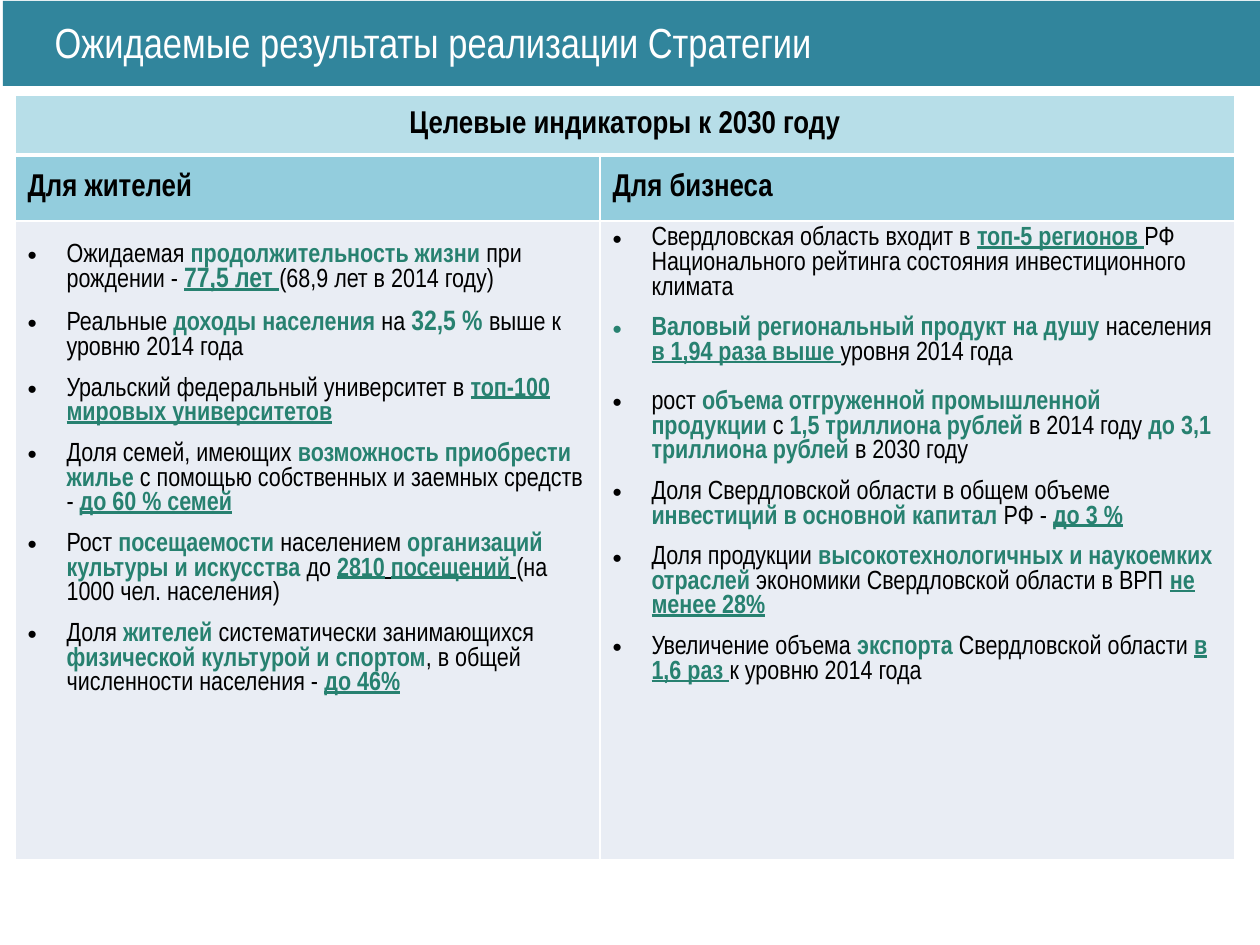
from pptx import Presentation
from pptx.dml.color import RGBColor
from pptx.enum.shapes import MSO_SHAPE as Shape
from pptx.enum.text import MSO_ANCHOR as Anchor, PP_ALIGN as Align
from pptx.oxml import parse_xml
from pptx.oxml.ns import nsdecls
from pptx.util import Pt

# Run styles: a plain string is ordinary text
GREEN = "278170"
KEY = dict(bold=True, color=GREEN)
TARGET = dict(KEY, underline=True)
LINED = dict(underline=True)
BIG = 16

TITLE = "Ожидаемые результаты реализации Стратегии"
SUBTITLE = "Целевые индикаторы к 2030 году"
HEADINGS = ["Для жителей", "Для бизнеса"]
RESIDENTS = [
    ["Ожидаемая ", ("продолжительность жизни ", KEY), "при рождении - ",
     ("77,5 лет ", dict(TARGET, size=BIG)), "(68,9 лет в 2014 году)"],
    ["Реальные ", ("доходы населения ", KEY), "на ",
     ("32,5 % ", dict(KEY, size=BIG)), "выше к уровню 2014 года"],
    ["Уральский федеральный университет в ",
     ("топ-100 мировых университетов", TARGET)],
    ["Доля семей, имеющих ", ("возможность приобрести жилье ", KEY),
     "с помощью собственных и заемных средств - ", ("до 60 % семей", TARGET)],
    ["Рост ", ("посещаемости", KEY), " населением ",
     ("организаций культуры и искусства ", KEY), "до ", ("2810", TARGET),
     (" ", LINED), ("посещений", TARGET), (" ", LINED),
     "(на 1000 чел. населения)"],
    ["Доля ", ("жителей", KEY), " систематически занимающихся ",
     ("физической культурой и спортом", KEY),
     ", в общей численности населения - ", ("до 46%", TARGET)],
]
BUSINESS = [
    ["Свердловская область входит в ", ("топ-5 регионов ", TARGET),
     "РФ Национального рейтинга состояния инвестиционного климата"],
    [("Валовый региональный продукт на душу ", KEY), "населения ",
     ("в 1,94 раза выше ", TARGET), "уровня 2014 года"],
    ["рост ", ("объема отгруженной промышленной продукции ", KEY), "с ",
     ("1,5 триллиона рублей ", KEY), "в 2014 году ",
     ("до 3,1 триллиона рублей", KEY), " в 2030 году"],
    ["Доля Свердловской области в общем объеме ",
     ("инвестиций в основной капитал ", KEY), "РФ - ", ("до 3 %", TARGET)],
    ["Доля продукции ", ("высокотехнологичных и наукоемких отраслей ", KEY),
     "экономики Свердловской области в ВРП ", ("не менее 28%", TARGET)],
    ["Увеличение объема ", ("экспорта", KEY), " Свердловской области ",
     ("в", TARGET), " ", ("1,6 раз ", TARGET), "к уровню 2014 года"],
]
GAP, WIDE_GAP = 9.3, 14  # points between bullets
# bullets, top margin in px, gap before each bullet
LISTS = [(RESIDENTS, 22, [0] + [GAP] * 5),
         (BUSINESS, 6, [0, GAP, WIDE_GAP] + [GAP] * 3)]

COLUMNS = [585, 635]
ROWS = [60, 66, 639]
ROW_FILLS = ["B7DEE8", "93CDDD", "E9EDF4"]
INDENT = 39


def px(value):
    return value * 914400 // 126


def rgb(color):
    return RGBColor.from_string(color)


def add_text(para, text, size=15, color="000000", bold=False, underline=False):
    span = para.add_run()
    span.text = text
    font = span.font
    font.name, font.size = "Arial Narrow", Pt(size)
    font.bold, font.underline = bold, underline
    font.color.rgb = rgb(color)


def add_bullet(para):
    props = para._p.get_or_add_pPr()
    props.set("marL", str(px(INDENT)))
    props.set("indent", str(-px(INDENT)))
    props.append(parse_xml(f'<a:buFont {nsdecls("a")} typeface="Arial"/>'))
    props.append(parse_xml(f'<a:buChar {nsdecls("a")} char="•"/>'))


def set_borders(cell, **widths):
    props = cell._tc.get_or_add_tcPr()
    for place, side in enumerate("LRTB"):
        width = Pt(widths.get(side, 1))
        props.insert(place, parse_xml(
            f'<a:ln{side} {nsdecls("a")} w="{width}"><a:solidFill>'
            f'<a:srgbClr val="FFFFFF"/></a:solidFill></a:ln{side}>'))


deck = Presentation()
deck.slide_width, deck.slide_height = px(1260), px(945)
page = deck.slides.add_slide(deck.slide_layouts[5])

# Title on its bar
title = page.shapes.title
bar = page.shapes.add_shape(Shape.RECTANGLE, px(3), px(1), px(1260), px(85))
bar.shadow.inherit = False
bar.fill.solid()
bar.fill.fore_color.rgb = rgb("31859C")
bar.line.fill.background()
title.element.addprevious(bar.element)
title.left, title.top, title.width, title.height = map(px, (42, 10, 953, 63))
title.text_frame.vertical_anchor = Anchor.MIDDLE
heading = title.text_frame.paragraphs[0]
heading.alignment = Align.LEFT
add_text(heading, TITLE, size=24, color="FFFFFF")

# Table grid, fills and borders
table = page.shapes.add_table(len(ROWS), len(COLUMNS), px(15), px(95),
                              px(sum(COLUMNS)), px(sum(ROWS))).table
for column, width in zip(table.columns, COLUMNS):
    column.width = px(width)
for row, height, fill in zip(table.rows, ROWS, ROW_FILLS):
    row.height = px(height)
    for cell in row.cells:
        cell.fill.solid()
        cell.fill.fore_color.rgb = rgb(fill)
for column in range(len(COLUMNS)):
    set_borders(table.cell(0, column), B=3)
    set_borders(table.cell(1, column), T=3)
    set_borders(table.cell(2, column))

# Table headings
top = table.cell(0, 0)
top.merge(table.cell(0, 1))
for cell, text in [(top, SUBTITLE), *zip(table.rows[1].cells, HEADINGS)]:
    cell.vertical_anchor = Anchor.MIDDLE
    add_text(cell.text_frame.paragraphs[0], text, size=18, bold=True)
top.text_frame.paragraphs[0].alignment = Align.CENTER

# Indicator lists
for cell, (bullets, margin, gaps) in zip(table.rows[2].cells, LISTS):
    cell.margin_top = px(margin)
    frame = cell.text_frame
    for number, (parts, gap) in enumerate(zip(bullets, gaps)):
        para = frame.add_paragraph() if number else frame.paragraphs[0]
        para.space_before = Pt(gap)
        add_bullet(para)
        for part in parts:
            text, style = (part, {}) if isinstance(part, str) else part
            add_text(para, text, **style)

deck.save("out.pptx")
